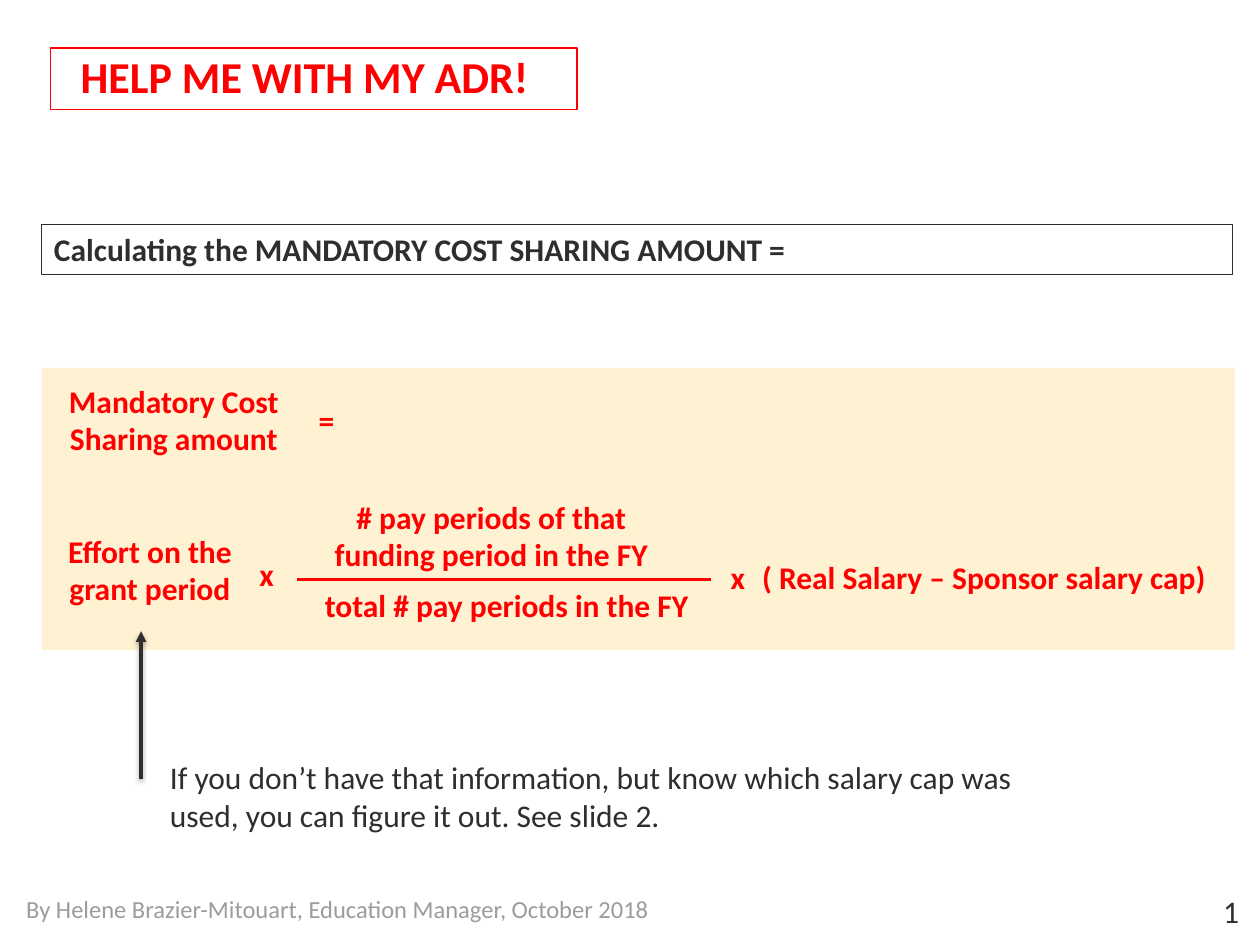
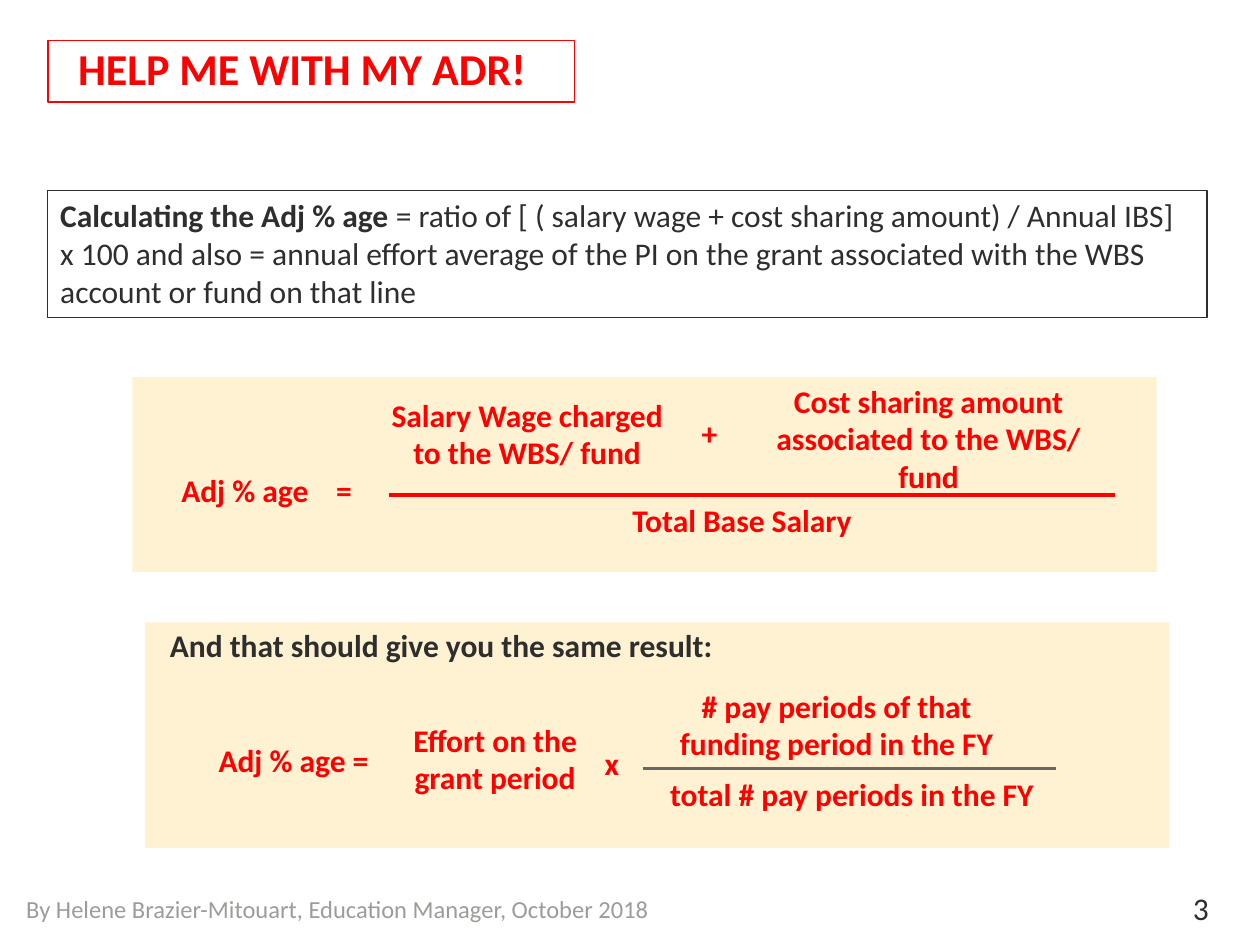
from lxml import etree
from pptx import Presentation
from pptx.dml.color import RGBColor
from pptx.enum.shapes import MSO_CONNECTOR, MSO_SHAPE
from pptx.enum.text import MSO_ANCHOR, PP_ALIGN
from pptx.oxml.ns import qn
from pptx.util import Inches, Pt

RECT = MSO_SHAPE.RECTANGLE
STRAIGHT = MSO_CONNECTOR.STRAIGHT
LEFT, CENTER = PP_ALIGN.LEFT, PP_ALIGN.CENTER
TOP, MIDDLE = MSO_ANCHOR.TOP, MSO_ANCHOR.MIDDLE

FONT = "Calibri"
RED, DARK, GRAY = "FF0000", "2D2E2D", "9B9D98"
WHITE, CREAM, RULE_GRAY = "FFFFFF", "FFF2D3", "676965"


def rgb(hex_color):
    return RGBColor.from_string(hex_color)


def format_runs(p, color, size=18, bold=False):
    for r in p.runs:
        r.font.name = FONT
        r.font.size = Pt(size)
        r.font.bold = bold
        r.font.color.rgb = rgb(color)


def add_text(s, x, y, w, h, text, color=DARK, size=18, bold=False,
             align=LEFT, wrap=True):
    sp = s.shapes.add_textbox(Inches(x), Inches(y), Inches(w), Inches(h))
    tf = sp.text_frame
    tf.word_wrap = wrap
    tf.text = text
    p = tf.paragraphs[0]
    p.alignment = align
    format_runs(p, color, size, bold)


def add_term(s, x, y, w, h, text, align=CENTER):
    add_text(s, x, y, w, h, text, RED, bold=True, align=align)


def add_operator(s, x, y, symbol):
    add_text(s, x, y, 0.33, 0.4, symbol, RED, bold=True, wrap=False)


def add_box(s, x, y, w, h, fill, line=None):
    sp = s.shapes.add_shape(RECT, Inches(x), Inches(y), Inches(w), Inches(h))
    sp.shadow.inherit = False
    sp.fill.solid()
    sp.fill.fore_color.rgb = rgb(fill)
    if line:
        sp.line.color.rgb = rgb(line)
        sp.line.width = Pt(0.75)
    else:
        sp.line.fill.background()
    return sp


def add_title(s, x, y):
    tf = add_box(s, x, y, 4.18, 0.49, WHITE, RED).text_frame
    tf.word_wrap = True
    tf.vertical_anchor = MIDDLE
    tf.margin_left, tf.margin_top = Inches(0.24), 0
    tf.text = "HELP ME WITH MY ADR!"
    p = tf.paragraphs[0]
    p.alignment = LEFT
    format_runs(p, RED, 25.2, True)


def add_definition(s, x, y, w, h, heading, body=""):
    tf = add_box(s, x, y, w, h, WHITE, DARK).text_frame
    tf.word_wrap = True
    tf.vertical_anchor = TOP
    tf.text = heading
    p = tf.paragraphs[0]
    p.alignment = LEFT
    if body:
        p.add_run().text = body
    format_runs(p, DARK)
    p.runs[0].font.bold = True


def add_line(s, x1, y1, x2, y2, color):
    cn = s.shapes.add_connector(STRAIGHT, Inches(x1), Inches(y1),
                                Inches(x2), Inches(y2))
    cn.line.color.rgb = rgb(color)
    cn.line.width = Pt(2)
    effects = etree.SubElement(cn._element.spPr, qn("a:effectLst"))
    return cn, effects


def add_arrow(s, x1, y1, x2, y2):
    cn, effects = add_line(s, x1, y1, x2, y2, DARK)
    etree.SubElement(cn.line._get_or_add_ln(), qn("a:tailEnd"), type="triangle")
    shadow = etree.SubElement(effects, qn("a:outerShdw"), blurRad=str(Pt(3.1)),
                              dist=str(Pt(1.6)), dir="5400000", rotWithShape="0")
    black = etree.SubElement(shadow, qn("a:srgbClr"), val="000000")
    etree.SubElement(black, qn("a:alpha"), val="38000")


def add_effort_formula(s, x, y, rule_color):
    add_term(s, x + 2.14, y, 3.08, 0.71,
             "# pay periods of that funding period in the FY")
    add_term(s, x, y + 0.27, 1.94, 0.71, "Effort on the grant period")
    add_operator(s, x + 1.74, y + 0.46, "x")
    add_term(s, x + 2.26, y + 0.7, 3.24, 0.4,
             "total # pay periods in the FY", LEFT)
    add_line(s, x + 2.14, y + 0.7, x + 5.42, y + 0.7, rule_color)


def add_footer(s, number, x, y):
    add_text(s, 0.11, 7.05, 5.19, 0.34,
             "By Helene Brazier-Mitouart, Education Manager, October 2018",
             GRAY, 14, wrap=False)
    add_text(s, x, y, 0.33, 0.4, number, wrap=False)


def add_cost_sharing_slide(prs):
    s = prs.slides.add_slide(prs.slide_layouts[6])
    add_title(s, 0.4, 0.38)
    add_definition(s, 0.33, 1.78, 9.45, 0.4,
                   "Calculating the MANDATORY COST SHARING AMOUNT =")
    add_box(s, 0.33, 2.92, 9.47, 2.24, CREAM)
    add_term(s, 0.41, 2.98, 1.94, 0.71, "Mandatory Cost Sharing amount")
    add_operator(s, 2.43, 3.13, "=")
    add_effort_formula(s, 0.22, 3.9, RED)
    add_operator(s, 5.7, 4.38, "x")
    add_term(s, 5.87, 4.38, 3.88, 0.4, "( Real Salary – Sponsor salary cap)")
    add_arrow(s, 1.12, 6.18, 1.12, 5.01)
    add_text(s, 1.25, 5.97, 6.92, 0.71,
             "If you don’t have that information, but know which salary cap "
             "was used, you can figure it out. See slide 2.")
    add_footer(s, "1", 9.61, 7.03)


def add_adjusted_percentage_slide(prs):
    s = prs.slides.add_slide(prs.slide_layouts[6])
    add_title(s, 0.38, 0.32)
    add_definition(s, 0.38, 1.51, 9.2, 1.01, "Calculating the Adj % age ",
                   "= ratio of [ ( salary wage + cost sharing amount) / Annual "
                   "IBS] x 100 and also = annual effort average of the PI on the "
                   "grant associated with the WBS account or fund on that line")
    add_box(s, 1.05, 2.99, 8.13, 1.55, CREAM)
    add_term(s, 1.34, 3.69, 1.25, 0.4, "Adj % age", LEFT)
    add_operator(s, 2.57, 3.69, "=")
    add_term(s, 3, 3.09, 2.37, 0.71, "Salary Wage charged to the WBS/ fund")
    add_operator(s, 5.47, 3.24, "+")
    add_term(s, 5.89, 2.98, 2.96, 1.01,
             "Cost sharing amount associated to the WBS/ fund")
    add_line(s, 3.09, 3.93, 8.85, 3.93, RED)
    add_term(s, 3.95, 3.93, 3.88, 0.4, "Total Base Salary")

    add_box(s, 1.15, 4.94, 8.13, 1.79, CREAM)
    add_text(s, 1.25, 4.92, 4.54, 0.4,
             "And that should give you the same result:", bold=True, wrap=False)
    add_term(s, 1.36, 5.83, 1.94, 0.4, "Adj % age =")
    add_effort_formula(s, 2.96, 5.4, RULE_GRAY)
    add_footer(s, "3", 9.37, 7.01)


def main():
    prs = Presentation()
    prs.slide_width, prs.slide_height = Inches(10), Inches(7.5)
    add_cost_sharing_slide(prs)
    add_adjusted_percentage_slide(prs)
    prs.save("out.pptx")


if __name__ == "__main__":
    main()
